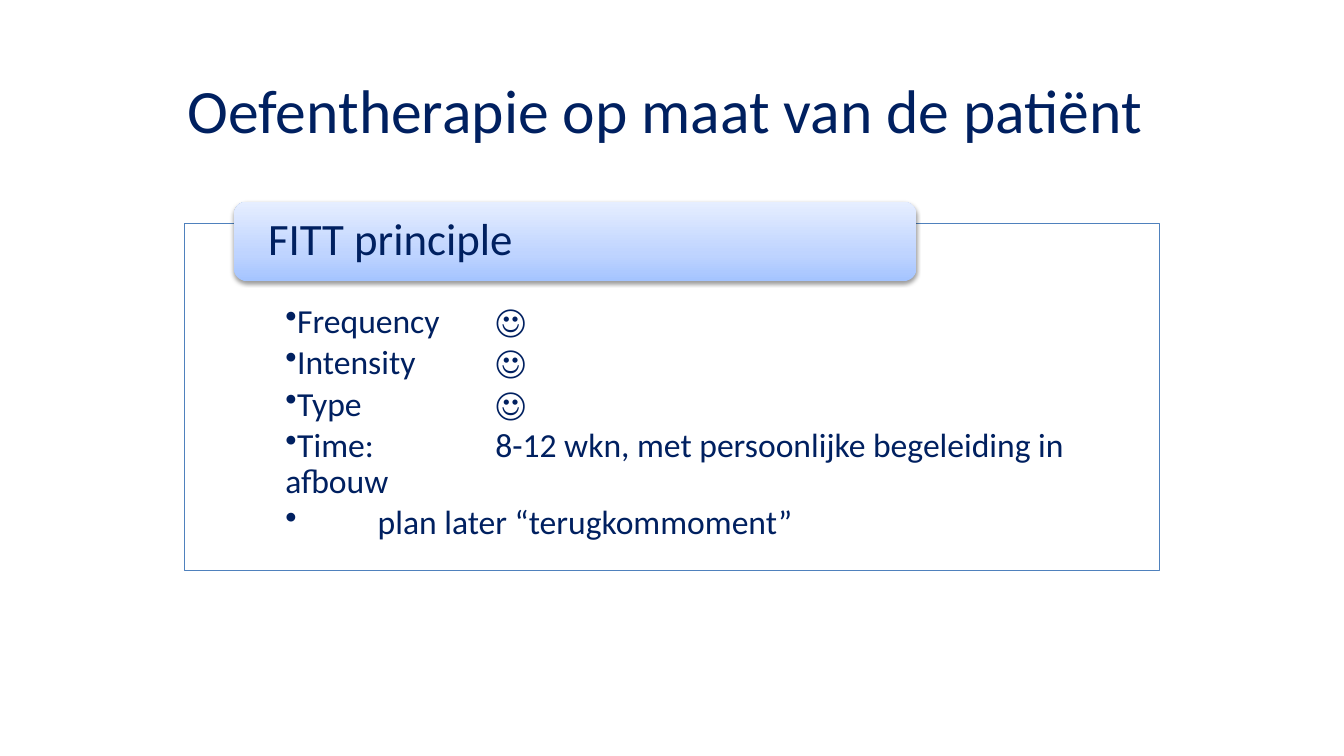
import pptx
import pptx.util
import pptx.oxml
import pptx.oxml.ns
import pptx.dml.color
import pptx.enum.shapes
import pptx.enum.text

Inches, Pt = pptx.util.Inches, pptx.util.Pt
RGB = pptx.dml.color.RGBColor.from_string
SHAPE = pptx.enum.shapes.MSO_SHAPE
ALIGN = pptx.enum.text.PP_ALIGN
ANCHOR = pptx.enum.text.MSO_ANCHOR
qn = pptx.oxml.ns.qn

COLORS = {"navy": "002060", "white": "FFFFFF", "edge": "4F81BD", "shade": "000000",
          "low": "A4C4FF", "mid": "BFD4FF", "high": "E6EEFF"}
STOPS = [(0, "low"), (35, "mid"), (100, "high")]
ITEMS = [
    "Frequency\t☺",
    "Intensity\t☺",
    "Type\t\t☺",
    "Time: \t8-12 wkn, met persoonlijke begeleiding in afbouw",
    "\tplan later “terugkommoment”",
]


def xml(tag, body):
    """Make a drawing element from its tag with attributes and its content."""
    name = tag.split()[0]
    space = pptx.oxml.ns.nsdecls("a")
    return pptx.oxml.parse_xml(f"<a:{tag} {space}>{body}</a:{name}>")


def write(shape, lines, size, inset=(0.1, 0.05, 0.1, 0.05), align=ALIGN.LEFT,
          anchor=ANCHOR.MIDDLE, after=0, bullet=False):
    """Fill a shape with formatted paragraphs."""
    frame = shape.text_frame
    frame.word_wrap = True
    frame.vertical_anchor = anchor
    (frame.margin_left, frame.margin_top,
     frame.margin_right, frame.margin_bottom) = map(Inches, inset)
    for i, line in enumerate(lines):
        para = frame.add_paragraph() if i else frame.paragraphs[0]
        para.text = line
        para.alignment = align
        para.line_spacing = 0.9
        para.space_after = Pt(after)
        if bullet:
            props = para._p.get_or_add_pPr()
            props.set("marL", str(Inches(0.25)))
            props.set("indent", "0")
            props.set("defTabSz", "1066800")
            props.append(xml('buChar char="•"', ""))
        para.font.size = Pt(size)
        para.font.name = "Calibri"
        para.font.color.rgb = RGB(COLORS["navy"])


def title(slide, x, y, w, h):
    """Place the slide title."""
    box = slide.shapes.add_textbox(*map(Inches, (x, y, w, h)))
    write(box, ["Oefentherapie op maat van de patiënt "], 44, align=ALIGN.CENTER)


def panel(slide, x, y, w, h):
    """Place the framed list with its heading tab."""
    frame = slide.shapes.add_shape(SHAPE.RECTANGLE, *map(Inches, (x, y, w, h)))
    frame.shadow.inherit = False
    frame.fill.solid()
    frame.fill.fore_color.rgb = RGB(COLORS["white"])
    frame._element.spPr.find(".//" + qn("a:srgbClr")).append(xml('alpha val="90000"', ""))
    frame.line.color.rgb = RGB(COLORS["edge"])
    frame.line.width = Pt(0.75)
    write(frame, ITEMS, 24, (0.75, 0.8, 0.75, 0.19), anchor=ANCHOR.TOP,
          after=3.6, bullet=True)
    head(slide, x + 0.49, y - 0.22, 0.7 * w, 0.79)


def head(slide, x, y, w, h):
    """Place the shaded heading tab."""
    tab = slide.shapes.add_shape(SHAPE.ROUNDED_RECTANGLE, *map(Inches, (x, y, w, h)))
    tab.shadow.inherit = False
    tab.line.fill.background()
    props = tab._element.spPr
    stops = "".join(f'<a:gs pos="{pos * 1000}"><a:srgbClr val="{COLORS[name]}"/></a:gs>'
                    for pos, name in STOPS)
    props.find(qn("a:ln")).addprevious(xml(
        "gradFill", f'<a:gsLst>{stops}</a:gsLst><a:lin ang="16200000" scaled="0"/>'))
    props.find(qn("a:effectLst")).append(xml(
        f'outerShdw blurRad="{Pt(3.1)}" dist="{Pt(1.6)}" dir="5400000" rotWithShape="0"',
        f'<a:srgbClr val="{COLORS["shade"]}"><a:alpha val="38000"/></a:srgbClr>'))
    write(tab, ["FITT principle"], 32, (0.3, 0.04, 0.3, 0.04))


def main():
    """Build the slide and save it."""
    deck = pptx.Presentation()
    deck.slide_width, deck.slide_height = Inches(13.33), Inches(7.5)
    slide = deck.slides.add_slide(deck.slide_layouts[6])
    title(slide, 0.92, 0.4, 11.5, 1.45)
    panel(slide, 1.83, 2.22, 9.67, 3.44)
    deck.save("out.pptx")


if __name__ == "__main__":
    main()
